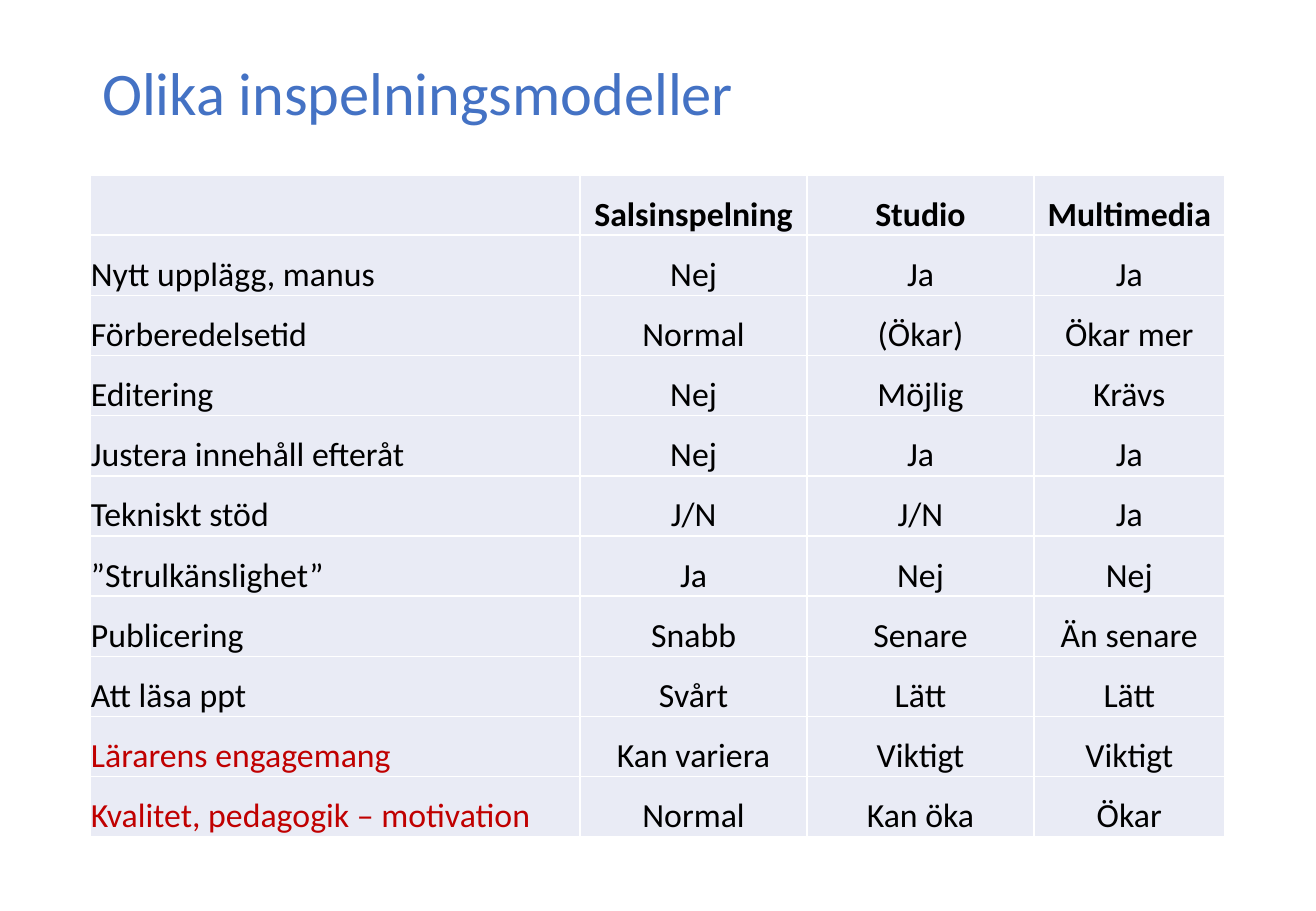
import pptx
import pptx.util
import pptx.dml.color
import pptx.enum.text
import pptx.oxml
import pptx.oxml.ns
import lxml.etree

Cm = pptx.util.Cm
Pt = pptx.util.Pt
RGBColor = pptx.dml.color.RGBColor
PP_ALIGN = pptx.enum.text.PP_ALIGN
MSO_ANCHOR = pptx.enum.text.MSO_ANCHOR

FONT = "Calibri"
BLUE = RGBColor(0x44, 0x72, 0xC4)
BLACK = RGBColor(0x00, 0x00, 0x00)
RED = RGBColor(0xC0, 0x00, 0x00)
PALE = RGBColor(0xE9, 0xEB, 0xF5)
WHITE = RGBColor(0xFF, 0xFF, 0xFF)

TITLE_BOX = (Cm(1.88), Cm(1.02), Cm(23.72), Cm(1.98))
TABLE_BOX = (Cm(1.88), Cm(3.66), Cm(23.72), Cm(13.84))
COLUMN_SHARES = (0.432, 0.2, 0.2, 0.168)

MODELS = [
    ("", "Salsinspelning", "Studio", "Multimedia"),
    ("Nytt upplägg, manus", "Nej", "Ja", "Ja"),
    ("Förberedelsetid", "Normal", "(Ökar)", "Ökar mer"),
    ("Editering", "Nej", "Möjlig", "Krävs"),
    ("Justera innehåll efteråt", "Nej", "Ja", "Ja"),
    ("Tekniskt stöd", "J/N", "J/N", "Ja"),
    ("”Strulkänslighet”", "Ja", "Nej", "Nej"),
    ("Publicering", "Snabb", "Senare", "Än senare"),
    ("Att läsa ppt", "Svårt", "Lätt", "Lätt"),
    ("Lärarens engagemang", "Kan variera", "Viktigt", "Viktigt"),
    ("Kvalitet, pedagogik – motivation", "Normal", "Kan öka", "Ökar"),
]
RED_LABELS = {"Lärarens engagemang", "Kvalitet, pedagogik – motivation"}


def format_text(p, size, color, bold=False):
    for font in [p.font] + [r.font for r in p.runs]:
        font.name = FONT
        font.size = Pt(size)
        font.bold = bold
        font.color.rgb = color


def set_borders(cell, color, width):
    tcPr = cell._tc.get_or_add_tcPr()
    for i, side in enumerate(("lnL", "lnR", "lnT", "lnB")):
        ln = pptx.oxml.parse_xml(
            f'<a:{side} {pptx.oxml.ns.nsdecls("a")} w="{Pt(width)}">'
            f'<a:solidFill><a:srgbClr val="{color}"/></a:solidFill></a:{side}>')
        tcPr.insert(i, ln)


def add_title(slide, box, text):
    sp = slide.shapes.title
    sp.left, sp.top, sp.width, sp.height = box
    tf = sp.text_frame
    tf.text = text
    tf.word_wrap = True
    tf.auto_size = pptx.enum.text.MSO_AUTO_SIZE.NONE
    tf.vertical_anchor = MSO_ANCHOR.MIDDLE
    p = tf.paragraphs[0]
    p.alignment = PP_ALIGN.LEFT
    p.line_spacing = 0.9
    format_text(p, 35.8, BLUE)


def fill_cell(cell, text, is_header, is_label):
    cell.fill.solid()
    cell.fill.fore_color.rgb = PALE
    set_borders(cell, WHITE, 1)
    cell.vertical_anchor = MSO_ANCHOR.BOTTOM
    cell.margin_left = cell.margin_right = cell.margin_top = Cm(0.02)
    cell.margin_bottom = 0
    cell.text = text
    p = cell.text_frame.paragraphs[0]
    p.alignment = PP_ALIGN.LEFT if is_label else PP_ALIGN.CENTER
    format_text(p, 20, RED if text in RED_LABELS else BLACK, is_header)


def add_comparison(slide, box, rows):
    left, top, width, height = box
    table = slide.shapes.add_table(
        len(rows), len(COLUMN_SHARES), left, top, width, height).table
    table.first_row = table.horz_banding = False
    for column, share in zip(table.columns, COLUMN_SHARES):
        column.width = round(width * share)
    for i, row in enumerate(rows):
        table.rows[i].height = height // len(rows)
        for j, text in enumerate(row):
            fill_cell(table.cell(i, j), text, i == 0, j == 0)


def main():
    prs = pptx.Presentation()
    prs.slide_width, prs.slide_height = Cm(27.51), Cm(19.05)
    slide = prs.slides.add_slide(prs.slide_layouts[5])
    add_title(slide, TITLE_BOX, "Olika inspelningsmodeller")
    add_comparison(slide, TABLE_BOX, MODELS)
    prs.save("out.pptx")


if __name__ == "__main__":
    main()
